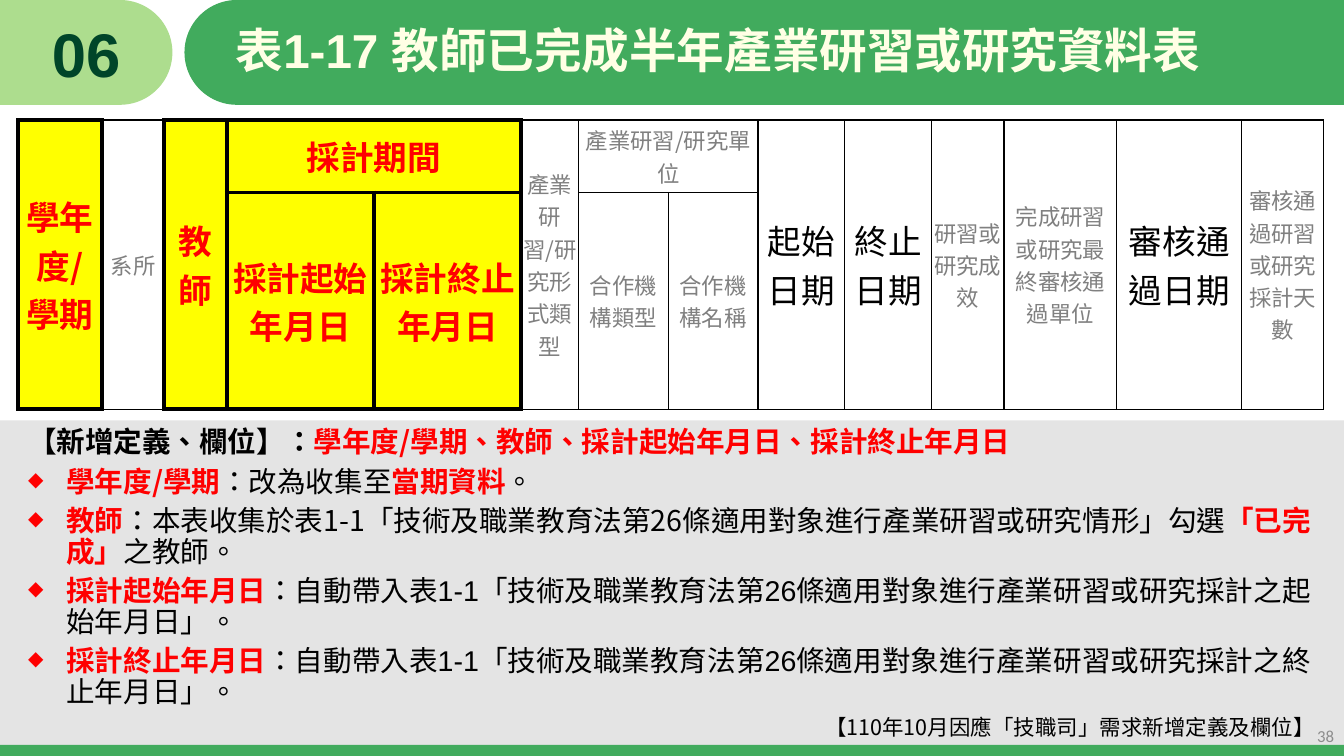
from dataclasses import dataclass

from lxml import etree
from pptx import Presentation
from pptx import util as u
from pptx.dml.color import RGBColor
from pptx.enum import shapes, text
from pptx.oxml import ns

GREEN, LIGHT_GREEN, RED, BLACK, GRAY = "41AB5D", "ADDD8E", "FF0000", "000000", "808080"
CJK = "Noto Sans CJK SC"
RECT, OVAL = shapes.MSO_SHAPE.RECTANGLE, shapes.MSO_SHAPE.OVAL
CENTER, RIGHT, LEFT = text.PP_ALIGN.CENTER, text.PP_ALIGN.RIGHT, text.PP_ALIGN.LEFT


@dataclass
class Block:
    left: float
    top: float
    width: float
    height: float
    color: str
    kind: int = RECT
    alpha: int = 100


@dataclass
class Span:
    words: str
    color: str = BLACK
    bold: bool = False
    size: float = 20.4
    font: str = CJK


@dataclass
class Line:
    spans: list[Span]
    align: int = LEFT
    bullet: bool = False
    spacing: float = 1
    before: float = 0


@dataclass
class Field:
    row: int
    col: int
    lines: list[str]
    rows: int = 1
    cols: int = 1
    date: bool = False


BLOCKS = [
    Block(0, 4.17, 13.33, 3.33, "BFBFBF", alpha=41),
    Block(0, 7.39, 13.33, 0.12, GREEN),
    Block(0, 0, 1.19, 1.04, LIGHT_GREEN),
    Block(0.67, 0, 1.04, 1.04, LIGHT_GREEN, OVAL),
    Block(1.83, 0, 1.04, 1.04, GREEN, OVAL),
    Block(2.35, 0, 10.99, 1.04, GREEN),
]

COLUMN_WIDTHS = [0.83, 0.62, 0.62, 1.46, 1.46, 0.57, 0.89, 0.89, 0.86, 0.86, 0.72, 1.12, 1.24, 0.81]
ROW_HEIGHTS = [0.72, 2.15]
NEW_COLUMNS = {0, 2, 3, 4}
FIELDS = [
    Field(0, 0, ["學年度/學期"], rows=2),
    Field(0, 1, ["系所"], rows=2),
    Field(0, 2, ["教師"], rows=2),
    Field(0, 3, ["採計期間"], cols=2),
    Field(1, 3, ["採計起始年月日"]),
    Field(1, 4, ["採計終止", "年月日"]),
    Field(0, 5, ["產業研習/研究形式類型"], rows=2),
    Field(0, 6, ["產業研習/研究單位"], cols=2),
    Field(1, 6, ["合作機構類型"]),
    Field(1, 7, ["合作機構名稱"]),
    Field(0, 8, ["起始日期"], rows=2, date=True),
    Field(0, 9, ["終止日期"], rows=2, date=True),
    Field(0, 10, ["研習或研究成效"], rows=2),
    Field(0, 11, ["完成研習或研究最終審核通過單位"], rows=2),
    Field(0, 12, ["審核通過日期"], rows=2, date=True),
    Field(0, 13, ["審核通過研習或研究採計天數"], rows=2),
]


def rgb(color: str) -> RGBColor:
    return RGBColor.from_string(color)


def add_block(slide, block: Block) -> None:
    shape = slide.shapes.add_shape(
        block.kind, *map(u.Inches, (block.left, block.top, block.width, block.height)))
    shape.shadow.inherit = False
    shape.line.fill.background()
    shape.fill.solid()
    shape.fill.fore_color.rgb = rgb(block.color)
    if block.alpha < 100:
        tint = shape.fill._xPr.find(".//" + ns.qn("a:srgbClr"))
        etree.SubElement(tint, ns.qn("a:alpha"), val=str(block.alpha * 1000))


def write_lines(frame, lines: list[Line]) -> None:
    for index, line in enumerate(lines):
        paragraph = frame.add_paragraph() if index else frame.paragraphs[0]
        paragraph.alignment = line.align
        paragraph.line_spacing = line.spacing
        paragraph.space_before = u.Pt(line.before)
        if line.bullet:
            props = paragraph._p.get_or_add_pPr()
            props.set("marL", str(u.Inches(0.38)))
            props.set("indent", str(-u.Inches(0.38)))
            etree.SubElement(props, ns.qn("a:buSzPct"), val="70000")
            etree.SubElement(props, ns.qn("a:buChar"), char="◆")
        for span in line.spans:
            run = paragraph.add_run()
            run.text = span.words
            run.font.size = u.Pt(span.size)
            run.font.bold = span.bold
            run.font.name = span.font
            run.font.color.rgb = rgb(span.color)
            props = run._r.get_or_add_rPr()
            props.set("lang", "zh-TW")
            etree.SubElement(props, ns.qn("a:ea"), typeface=CJK)


def add_text(slide, left: float, top: float, width: float, height: float,
             lines: list[Line], anchor: int = text.MSO_ANCHOR.MIDDLE) -> None:
    frame = slide.shapes.add_textbox(*map(u.Inches, (left, top, width, height))).text_frame
    frame.word_wrap = True
    frame.vertical_anchor = anchor
    write_lines(frame, lines)


def add_borders(cell, column: int) -> None:
    new = column in NEW_COLUMNS
    weights = {
        "lnL": 3 if new or column - 1 in NEW_COLUMNS else 1,
        "lnR": 3 if new or column + 1 in NEW_COLUMNS else 1,
        "lnT": 3 if new else 1,
        "lnB": 3 if new else 1,
    }
    props = cell._tc.get_or_add_tcPr()
    for edge, weight in weights.items():
        border = etree.SubElement(props, ns.qn("a:" + edge), w=str(u.Pt(weight)))
        fill = etree.SubElement(border, ns.qn("a:solidFill"))
        etree.SubElement(fill, ns.qn("a:srgbClr"), val=BLACK)


def add_field_table(slide) -> None:
    table = slide.shapes.add_table(
        len(ROW_HEIGHTS), len(COLUMN_WIDTHS), u.Inches(0.18), u.Inches(1.19),
        u.Inches(sum(COLUMN_WIDTHS)), u.Inches(sum(ROW_HEIGHTS))).table
    table.first_row = table.horz_banding = False
    for column, width in zip(table.columns, COLUMN_WIDTHS):
        column.width = u.Inches(width)
    for row, height in zip(table.rows, ROW_HEIGHTS):
        row.height = u.Inches(height)
        for index, cell in enumerate(row.cells):
            add_borders(cell, index)
            cell.margin_left = cell.margin_right = u.Inches(0.02)
            cell.margin_top = cell.margin_bottom = 0
            cell.vertical_anchor = text.MSO_ANCHOR.MIDDLE
            if index in NEW_COLUMNS:
                cell.fill.solid()
                cell.fill.fore_color.rgb = rgb("FFFF00")
            else:
                cell.fill.background()
    for field in FIELDS:
        cell = table.cell(field.row, field.col)
        if field.rows * field.cols > 1:
            cell.merge(table.cell(field.row + field.rows - 1, field.col + field.cols - 1))
        new = field.col in NEW_COLUMNS
        color = RED if new else BLACK if field.date else GRAY
        size = 24 if new or field.date else 16
        write_lines(cell.text_frame, [
            Line([Span(words, color, new, size)], CENTER) for words in field.lines])


def note(*spans: Span, bullet: bool = True, align: int = LEFT) -> Line:
    return Line(list(spans), align, bullet, spacing=0.9, before=6)


def key(words: str) -> Span:
    return Span(words, RED, True)


def date_note(edge: str) -> Line:
    return note(key(f"採計{edge}年月日"), Span("："), Span(
        f"自動帶入表1-1「技術及職業教育法第26條適用對象進行產業研習或研究採計之{edge}年月日」。",
        font="Arial"))


def main() -> None:
    deck = Presentation()
    deck.slide_width, deck.slide_height = u.Inches(13.33), u.Inches(7.5)
    slide = deck.slides.add_slide(deck.slide_layouts[6])
    for block in BLOCKS:
        add_block(slide, block)
    add_text(slide, 2.24, 0, 10.9, 1.05, [Line([Span(
        "表1-17 教師已完成半年產業研習或研究資料表", "FFFFE5", True, 34, "Arial")], spacing=0.9)])
    add_text(slide, 10.33, 7.1, 3, 0.4, [Line([Span("38", "8C8C8C", size=12, font="Calibri")], RIGHT)])
    add_field_table(slide)
    add_text(slide, 0.18, 4.2, 12.96, 3.3, [
        note(Span("【新增定義、欄位】：", bold=True),
             key("學年度/學期、教師、採計起始年月日、採計終止年月日"), bullet=False),
        note(key("學年度/學期"), Span("：改為收集至"), key("當期資料"), Span("。")),
        note(key("教師"),
             Span("：本表收集於表1-1「技術及職業教育法第26條適用對象進行產業研習或研究情形」勾選"),
             key("「已完成」"), Span("之教師。")),
        date_note("起始"),
        date_note("終止"),
        note(Span("【110年10月因應「技職司」需求新增定義及欄位】", size=15.3), bullet=False, align=RIGHT),
    ], text.MSO_ANCHOR.TOP)
    add_text(slide, 0, 0, 1.71, 1.05, [Line([Span("06", "004529", True, 44, "Arial")], CENTER, before=10)])
    deck.save("out.pptx")


if __name__ == "__main__":
    main()
